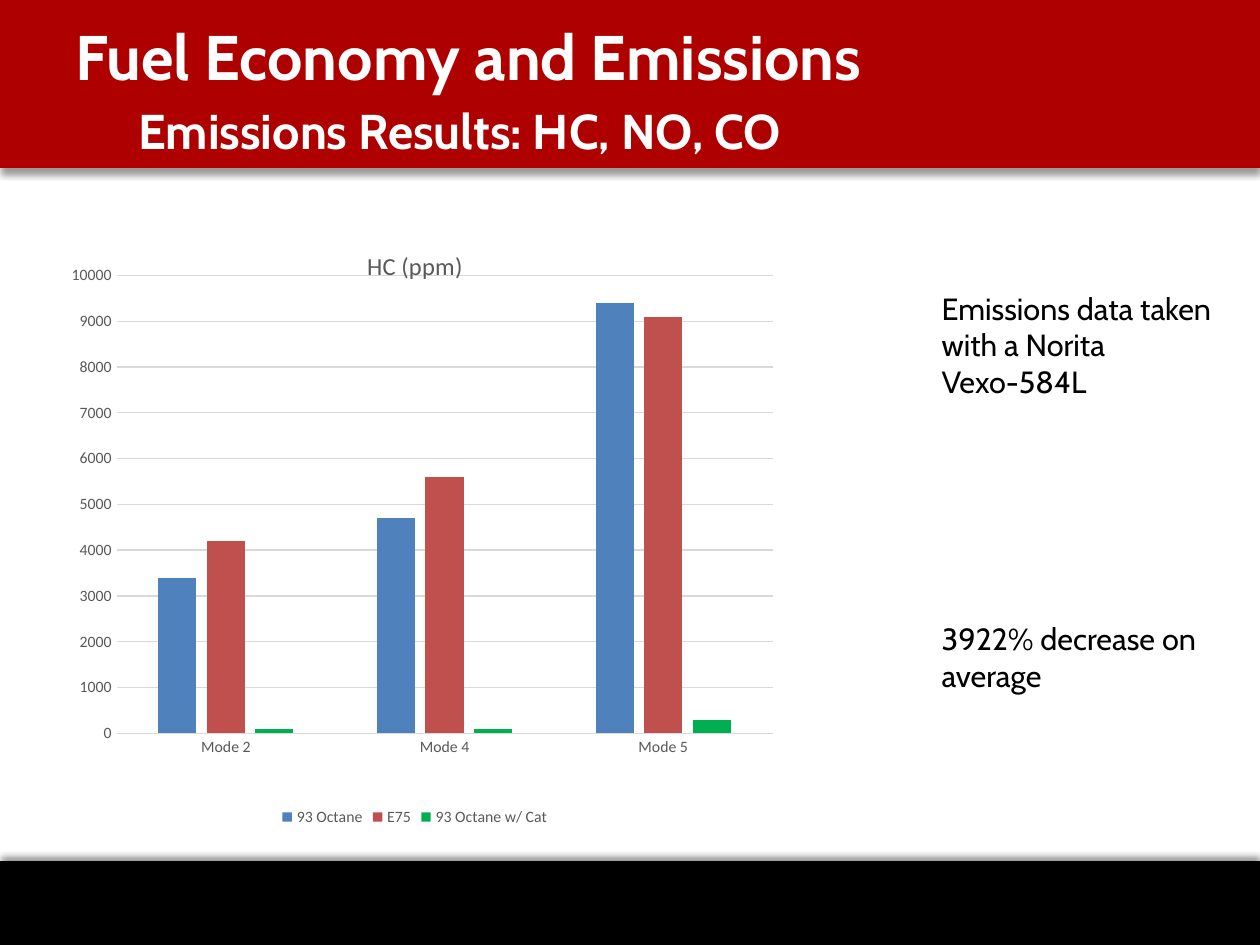
from dataclasses import dataclass

import pptx
import pptx.chart.data
import pptx.dml.color
import pptx.enum.chart
import pptx.enum.shapes
import pptx.enum.text
import pptx.oxml
import pptx.oxml.ns
import pptx.util

Pt = pptx.util.Pt
HEADING_FONT = "Cabin"
CHART_FONT = "Calibri"
LABEL_GRAY = "595959"
GRID_GRAY = "D9D9D9"


@dataclass
class Band:
    top: float
    height: float
    color: str
    shadow_angle: int


@dataclass
class Run:
    text: str
    size: float


@dataclass
class Series:
    name: str
    values: tuple
    color: str


BANDS = [Band(492, 48, "000000", 270), Band(0, 96, "AF0000", 90)]
MODES = ["Mode 2", "Mode 4", "Mode 5"]
HC_SERIES = [
    Series("93 Octane", (3400, 4700, 9400), "4F81BD"),
    Series("E75", (4200, 5600, 9100), "C0504D"),
    Series("93 Octane w/ Cat", (100, 100, 300), "00B050"),
]


def rgb(color: str) -> pptx.dml.color.RGBColor:
    return pptx.dml.color.RGBColor.from_string(color)


def style_font(font, size: float, color: str, name: str, bold: bool = False) -> None:
    font.size = Pt(size)
    font.color.rgb = rgb(color)
    font.name = name
    font.bold = bold


def add_band(slide, band: Band, width: int) -> None:
    shape = slide.shapes.add_shape(
        pptx.enum.shapes.MSO_SHAPE.RECTANGLE, 0, Pt(band.top), width, Pt(band.height))
    shape.fill.solid()
    shape.fill.fore_color.rgb = rgb(band.color)
    shape.line.fill.background()
    shape.shadow.inherit = False
    effects = shape._element.spPr.find(pptx.oxml.ns.qn("a:effectLst"))
    effects.append(pptx.oxml.parse_xml(
        f'<a:outerShdw {pptx.oxml.ns.nsdecls("a")} blurRad="{Pt(4)}" dist="{Pt(3)}" '
        f'dir="{band.shadow_angle * 60000}" rotWithShape="0"><a:srgbClr val="000000">'
        '<a:alpha val="40000"/></a:srgbClr></a:outerShdw>'))


def add_text(slide, paragraphs: list[list[list[Run]]], *, left: float, top: float,
             width: float, height: float, color: str, bold: bool = False,
             gap: float = 0, anchor=pptx.enum.text.MSO_ANCHOR.TOP) -> None:
    """Each paragraph is a list of lines, and each line a list of runs."""
    box = slide.shapes.add_textbox(Pt(left), Pt(top), Pt(width), Pt(height))
    frame = box.text_frame
    frame.word_wrap = True
    frame.vertical_anchor = anchor
    for index, lines in enumerate(paragraphs):
        paragraph = frame.add_paragraph() if index else frame.paragraphs[0]
        if index:
            paragraph.space_before = Pt(gap)
        for line_index, line in enumerate(lines):
            if line_index:
                paragraph.add_line_break()
            for part in line:
                run = paragraph.add_run()
                run.text = part.text
                style_font(run.font, part.size, color, HEADING_FONT, bold)


def set_layout(element, position: int, target: str = "", **fractions: float) -> None:
    """Place a chart part by fractions of the chart's size."""
    for old in element.findall(pptx.oxml.ns.qn("c:layout")):
        element.remove(old)
    inner = f'<c:layoutTarget val="{target}"/>' if target else ""
    inner += '<c:xMode val="edge"/><c:yMode val="edge"/>'
    inner += "".join(f'<c:{key} val="{value}"/>' for key, value in fractions.items())
    element.insert(position, pptx.oxml.parse_xml(
        f'<c:layout {pptx.oxml.ns.nsdecls("c")}><c:manualLayout>{inner}'
        '</c:manualLayout></c:layout>'))


def add_emissions_chart(slide) -> None:
    data = pptx.chart.data.CategoryChartData()
    data.categories = MODES
    for series in HC_SERIES:
        data.add_series(series.name, series.values)
    chart = slide.shapes.add_chart(
        pptx.enum.chart.XL_CHART_TYPE.COLUMN_CLUSTERED,
        Pt(24), Pt(126), Pt(426), Pt(349), data).chart
    style_font(chart.font, 10, "000000", CHART_FONT)

    # Title
    chart.has_title = True
    title = chart.chart_title
    title.text_frame.text = "HC (ppm)"
    style_font(title.text_frame.paragraphs[0].runs[0].font, 14, LABEL_GRAY, CHART_FONT)
    title.include_in_layout = False
    set_layout(title._element, 1, x=0.43, y=0.04)

    # Columns
    plot = chart.plots[0]
    plot.gap_width = 219
    plot.overlap = -27
    plot.vary_by_categories = False
    for column, series in zip(plot.series, HC_SERIES):
        column.format.fill.solid()
        column.format.fill.fore_color.rgb = rgb(series.color)
    set_layout(chart._chartSpace.chart.plotArea, 0, "inner",
               x=0.1, y=0.09, w=0.88, h=0.75)

    # Axes
    for axis in (chart.category_axis, chart.value_axis):
        axis.major_tick_mark = pptx.enum.chart.XL_TICK_MARK.NONE
        axis.minor_tick_mark = pptx.enum.chart.XL_TICK_MARK.NONE
        style_font(axis.tick_labels.font, 9, LABEL_GRAY, CHART_FONT)
    value_axis = chart.value_axis
    value_axis.minimum_scale = 0
    value_axis.maximum_scale = 10000
    value_axis.major_unit = 1000
    value_axis.format.line.fill.background()
    for line in (chart.category_axis.format.line, value_axis.major_gridlines.format.line):
        line.color.rgb = rgb(GRID_GRAY)
        line.width = Pt(0.75)

    # Legend
    chart.has_legend = True
    chart.legend.position = pptx.enum.chart.XL_LEGEND_POSITION.BOTTOM
    chart.legend.include_in_layout = False
    style_font(chart.legend.font, 9, LABEL_GRAY, CHART_FONT)


def main() -> None:
    presentation = pptx.Presentation()
    presentation.slide_width = Pt(720)
    presentation.slide_height = Pt(540)
    slide = presentation.slides.add_slide(presentation.slide_layouts[6])

    # Footer and header bands
    for band in BANDS:
        add_band(slide, band, presentation.slide_width)

    # Notes beside the chart
    add_text(slide,
             [[[Run("Emissions data taken with a Norita Vexo-584L", 17.5)]],
              [[Run("3922% decrease on average", 17.5)]]],
             left=531, top=162, width=189, height=222, color="000000", gap=126)

    # Title
    add_text(slide,
             [[[Run("Fuel Economy and Emissions", 36)],
               [Run("\t", 32.4), Run("Emissions Results: HC, NO, CO", 27.9)]]],
             left=36, top=12, width=594, height=78, color="FFFFFF", bold=True,
             anchor=pptx.enum.text.MSO_ANCHOR.MIDDLE)

    add_emissions_chart(slide)
    presentation.save("out.pptx")


if __name__ == "__main__":
    main()
